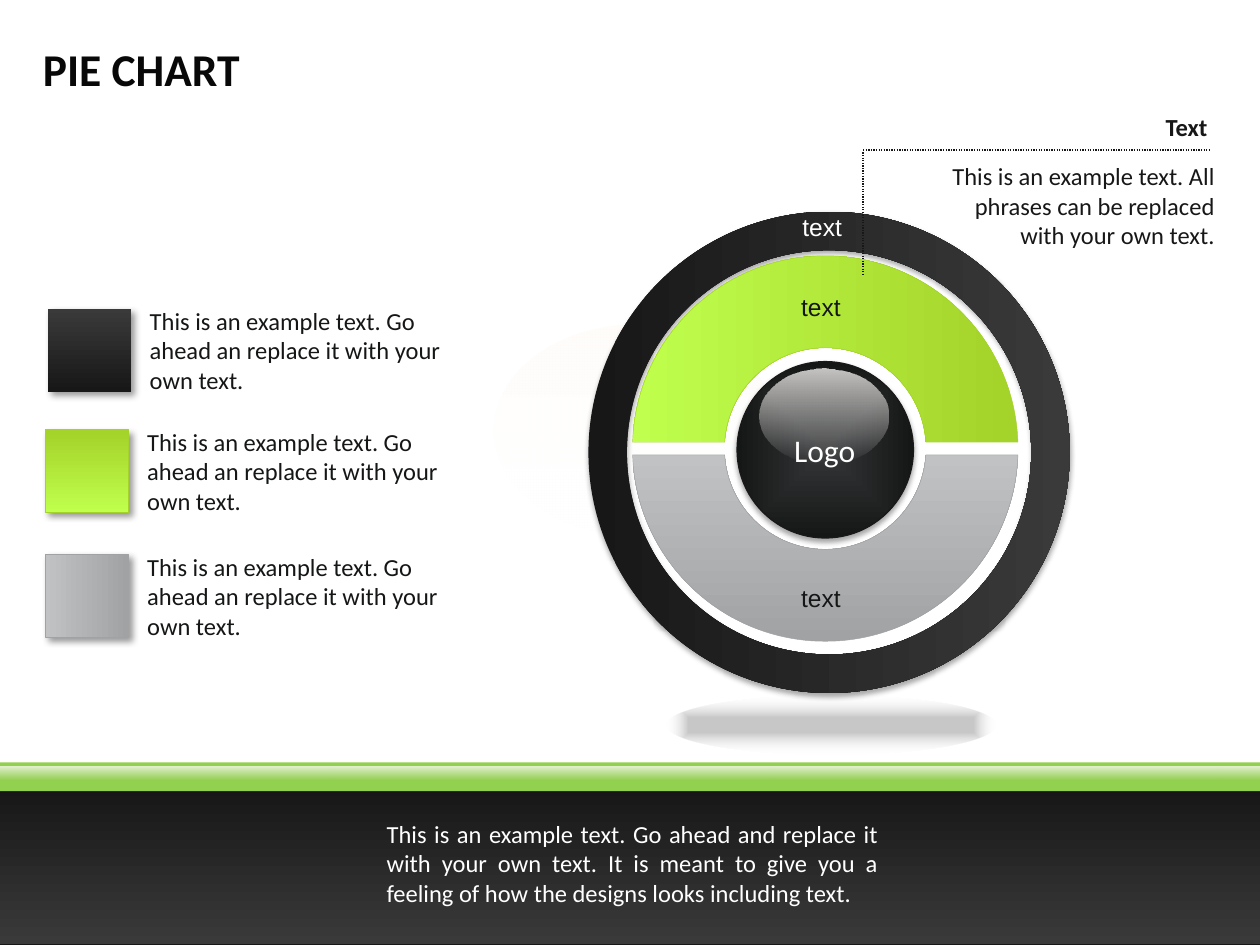
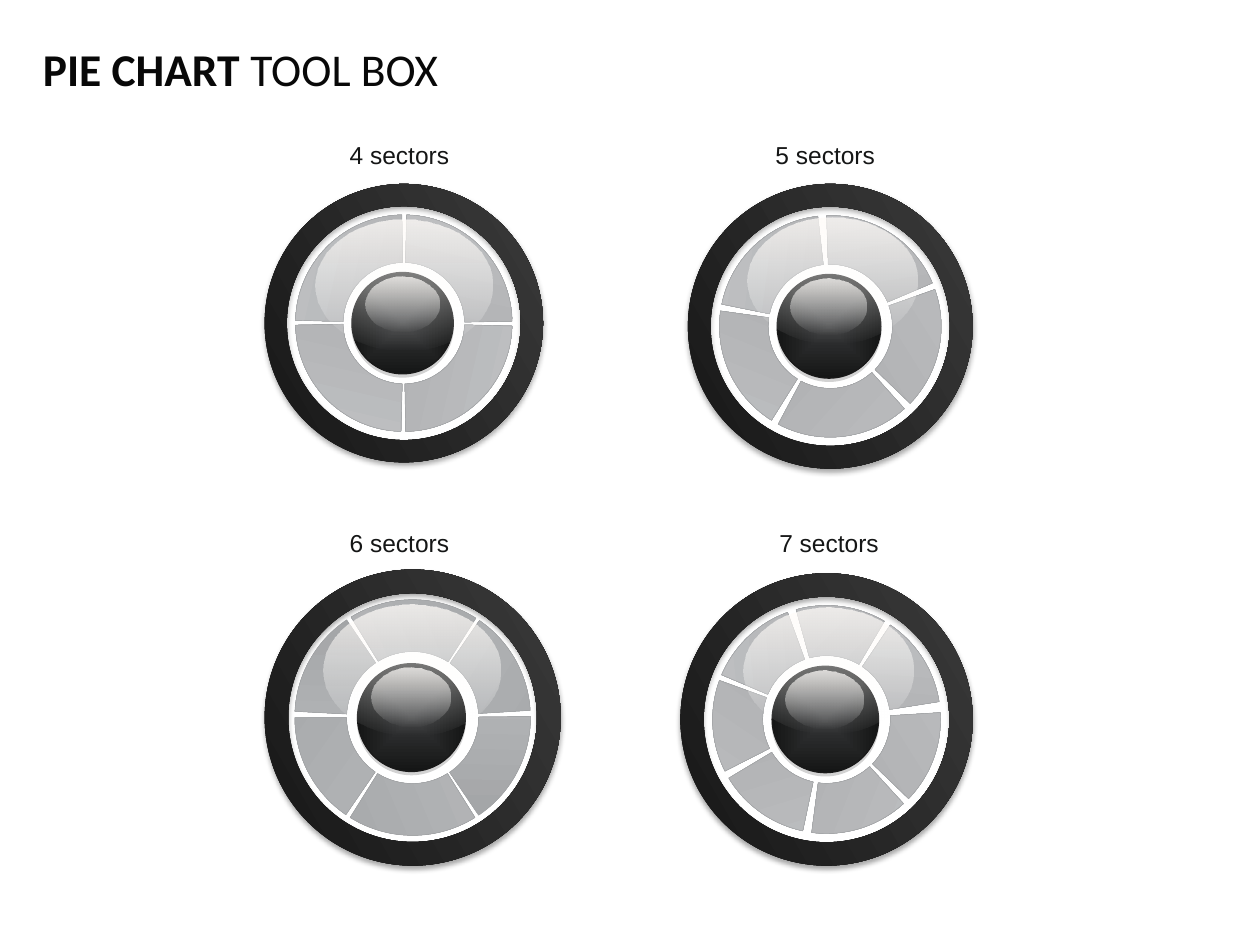
"""Build two pie chart slides: a labelled ring and a tool box of wheels."""
from math import asin, cos, pi, sin, tan

from lxml.etree import SubElement
from pptx import Presentation
from pptx.dml.color import RGBColor
from pptx.enum.dml import MSO_LINE as Dash
from pptx.enum.shapes import MSO_CONNECTOR as Link, MSO_SHAPE as Kind
from pptx.enum.text import MSO_ANCHOR as Anchor, PP_ALIGN as Align
from pptx.oxml.ns import qn
from pptx.util import Inches, Pt

WHITE, INK, BLACK, TITLE = "FFFFFF", "151616", "171717", "080808"
DARK = [(0, BLACK, 100), (100, "3A3A3A", 100)]
GREEN = [(0, "A4D329", 100), (2, "A4D329", 100), (100, "C0FF4D", 100)]
GRAY = [(0, "A0A2A4", 100), (100, "C1C2C4", 100)]
BALL = [(0, "353637", 100), (100, INK, 100)]
GLOSS = [(0, WHITE, 0), (100, "FFFCF9", 77)]
SHEEN = [(0, "F3F3F3", 0), (100, "FFFCF9", 79)]
FLOOR = [(24, "000000", 22), (100, WHITE, 0)]
DROP = ("000000", 35, 3.1, 1.8, 90)
SOFT = ("808080", 35, 0, 1.8, 90)
CAST = ("000000", 40, 4, 3, 45)
GREEN_EDGE, GRAY_EDGE = ("A4D329", 0.25), ("A0A2A4", 0.25)

LEGEND = "This is an example text. Go ahead an replace it with your own text."
CALLOUT = "This is an example text. All phrases can be replaced with your own text."
FOOTER = ("This is an example text. Go ahead and replace it with your own text. "
          "It is meant to give you a feeling of how the designs looks including text.")
SWATCHES = [
    (0.38, 2.45, DARK, 270, None),
    (0.36, 3.41, GREEN, 90, GREEN_EDGE),
    (0.36, 4.4, GRAY, 180, GRAY_EDGE),
]
RING_TAGS = [(6.27, 1.63, WHITE), (6.26, 2.27, INK), (6.26, 4.58, INK)]
LEADERS = [(6.85, 1.19, 9.6, 1.19), (6.85, 1.21, 6.85, 2.18)]

WHEELS = [
    dict(label="4 sectors", tag=(2.63, 1.06), at=(2.1, 1.46), size=2.21,
         disc=1.72, gloss=(2.5, 1.74, 1.41), turn=166,
         arcs=[(90 * i + 1.5, 90 * i + 89) for i in range(4)]),
    dict(label="5 sectors", tag=(6.01, 1.06), at=(5.46, 1.46), size=2.26,
         disc=1.76, gloss=(5.93, 1.73, 1.35), turn=166,
         arcs=[(48, 118), (122, 188), (191.5, 263.5), (268, 337), (340.5, 44)]),
    dict(label="6 sectors", tag=(2.63, 4.14), at=(2.1, 4.52), size=2.35,
         disc=1.87, gloss=(2.57, 4.8, 1.4), turn=235,
         arcs=[(183, 236), (238.5, 302.5), (304.5, 356.5), (359.5, 56),
               (58, 122), (124.5, 180)]),
    dict(label="7 sectors", tag=(6.04, 4.14), at=(5.4, 4.55), size=2.32,
         disc=1.81, gloss=(5.9, 4.82, 1.35), turn=166,
         arcs=[(153, 200), (203, 250), (254.5, 300.5), (304, 351),
               (356.5, 44), (47.5, 97.5), (102, 149)]),
]


def rgb(code):
    return RGBColor.from_string(code)


def tint(parent, code, alpha):
    clr = SubElement(parent, qn("a:srgbClr"), val=code)
    if alpha < 100:
        SubElement(clr, qn("a:alpha"), val=str(alpha * 1000))


def blend(shape, stops, angle):
    shape.fill.gradient()
    grad = shape.element.spPr.find(qn("a:gradFill"))
    for child in list(grad):
        grad.remove(child)
    group = SubElement(grad, qn("a:gsLst"))
    for pos, code, alpha in stops:
        tint(SubElement(group, qn("a:gs"), pos=str(pos * 1000)), code, alpha)
    if angle is None:
        way = SubElement(grad, qn("a:path"), path="shape")
        SubElement(way, qn("a:fillToRect"), dict.fromkeys("ltrb", "50000"))
    else:
        SubElement(grad, qn("a:lin"), ang=str(angle * 60000), scaled="0")


def style(shape, fill, angle=None, line=None, shade=None):
    if isinstance(fill, str):
        shape.fill.solid()
        shape.fill.fore_color.rgb = rgb(fill)
    else:
        blend(shape, fill, angle)
    if line:
        shape.line.color.rgb, shape.line.width = rgb(line[0]), Pt(line[1])
    else:
        shape.line.fill.background()
    shape.shadow.inherit = False
    if shade:
        code, alpha, blur, dist, turn = shade
        effects = shape.element.spPr.find(qn("a:effectLst"))
        outer = SubElement(effects, qn("a:outerShdw"), blurRad=str(Pt(blur)),
                           dist=str(Pt(dist)), dir=str(turn * 60000),
                           algn="ctr", rotWithShape="0")
        tint(outer, code, alpha)
    return shape


def draw(slide, kind, x, y, w, h, *look):
    shape = slide.shapes.add_shape(kind, *map(Inches, (x, y, w, h)))
    return style(shape, *look)


def write(slide, text, x, y, w, h, color=INK, face="Calibri", size=14,
          align=Align.LEFT, bold=False, anchor=Anchor.TOP):
    frame = slide.shapes.add_textbox(*map(Inches, (x, y, w, h))).text_frame
    frame.word_wrap, frame.vertical_anchor = True, anchor
    para = frame.paragraphs[0]
    para.text, para.alignment = text, align
    font = para.font
    font.name, font.size, font.bold = face, Pt(size), bold
    font.color.rgb = rgb(color)
    return frame


def title(slide, strong, light=""):
    frame = write(slide, strong, 0.34, 0.21, 9.32, 0.66, TITLE, size=26,
                  bold=True, anchor=Anchor.MIDDLE)
    frame.margin_left = frame.margin_right = 0
    if light:
        run = frame.paragraphs[0].add_run()
        run.text, run.font.bold = light, False


def shine(slide, x, y, w):
    draw(slide, Kind.OVAL, x, y, w, 0.74 * w, GLOSS, 270)


def ring(slide, x, y, size, angle):
    donut = draw(slide, Kind.DONUT, x, y, size, size, DARK, angle, None, DROP)
    donut.adjustments[0] = 0.08


def ball(slide, x, y, size, shade):
    draw(slide, Kind.OVAL, x, y, size, size, BALL, None, ("191919", 0.75), shade)
    shine(slide, x + 0.13 * size, y + 0.04 * size, 0.73 * size)


def half(slide, side, fill, angle, line):
    cx, cy, gap = 6.55, 3.56, 0.05

    def spot(radius, turn, pull=0):
        x = radius * (cos(turn) - pull * sin(turn))
        y = radius * (sin(turn) + pull * cos(turn))
        return Inches(cx + x), Inches(cy + side * y)

    def curve(radius):
        low = asin(gap / radius)
        pull = 4 / 3 * tan((pi / 2 - low) / 4)
        dots = [spot(radius, low)]
        for a, b in ((low, pi / 2), (pi / 2, pi - low)):
            dots += [spot(radius, a, pull), spot(radius, b, -pull), spot(radius, b)]
        return dots

    points = curve(1.53) + curve(0.8)[::-1]
    pen = slide.shapes.build_freeform(*points[0])
    pen.add_line_segments(points[1:], close=True)
    shape = style(pen.convert_to_shape(), fill, angle, line)
    lines = list(shape.element.spPr.iter(qn("a:lnTo")))
    for first in (0, 3, 7, 10):
        trio = lines[first:first + 3]
        outline = trio[0].getparent()
        bend = SubElement(outline, qn("a:cubicBezTo"))
        trio[0].addprevious(bend)
        for step in trio:
            bend.append(step[0])
            outline.remove(step)


def wheel(slide, label, tag, at, size, disc, gloss, turn, arcs):
    x, y = at
    core, inset = 0.364 * size, (size - disc) / 2
    edge = (size - core) / 2
    ring(slide, x, y, size, 330)
    ball(slide, x + edge - 0.01, y + edge, core, SOFT)
    for start, end in arcs:
        arc = draw(slide, Kind.BLOCK_ARC, x + inset, y + inset, disc, disc,
                   GRAY, 90, GRAY_EDGE)
        arc.rotation = (end - turn) % 360
        arc.adjustments[0] = (start - arc.rotation) % 360 * 0.6
        arc.adjustments[1] = turn * 0.6
        arc.adjustments[2] = 0.22
    shine(slide, *gloss)
    write(slide, label, *tag, 1.08, 0.34, face="Arial", align=Align.CENTER)


def footer(slide):
    draw(slide, Kind.RECTANGLE, -0.01, 6.25, 10.1, 1.25, DARK, 90, (BLACK, 0.75))
    draw(slide, Kind.RECTANGLE, -0.04, 6.05, 10.17, 0.23, "92D050")
    draw(slide, Kind.RECTANGLE, -0.04, 6.08, 10.17, 0.11, SHEEN, 270)
    write(slide, FOOTER, 2.97, 6.48, 4.1, 0.77, WHITE, align=Align.JUSTIFY,
          anchor=Anchor.BOTTOM)


def chart(slide):
    shine(slide, 3.92, 2.58, 2.26)
    ring(slide, 4.67, 1.68, 3.82, 0)
    half(slide, 1, GRAY, 270, GRAY_EDGE)
    half(slide, -1, GREEN, 180, GREEN_EDGE)
    ball(slide, 5.85, 2.87, 1.4, DROP)
    write(slide, "Logo", 5.83, 3.37, 1.43, 0.4, WHITE, size=18, align=Align.CENTER)
    for x, y, color in RING_TAGS:
        write(slide, "text", x, y, 0.97, 0.34, color, "Arial")
    for x, y, fill, angle, line in SWATCHES:
        draw(slide, Kind.RECTANGLE, x, y, 0.66, 0.66, fill, angle, line, CAST)
        write(slide, LEGEND, x + 0.71, y - 0.07, 2.56, 0.81)
    footer(slide)
    draw(slide, Kind.OVAL, 5.29, 5.52, 2.61, 0.47, FLOOR)
    write(slide, "Text", 9, 0.84, 0.68, 0.34, BLACK, align=Align.RIGHT, bold=True)
    write(slide, CALLOUT, 7.43, 1.23, 2.31, 0.81, BLACK, align=Align.RIGHT)
    for ends in LEADERS:
        link = slide.shapes.add_connector(Link.STRAIGHT, *map(Inches, ends))
        link.line.color.rgb, link.line.width = rgb(BLACK), Pt(0.75)
        link.line.dash_style = Dash.ROUND_DOT
        SubElement(link.element.spPr, qn("a:effectLst"))
    title(slide, "PIE CHART")


def tools(slide):
    for spec in WHEELS:
        wheel(slide, **spec)
    title(slide, "PIE CHART ", "TOOL BOX")


def main():
    deck = Presentation()
    deck.slide_width, deck.slide_height = Inches(10), Inches(7.5)
    for build in (chart, tools):
        build(deck.slides.add_slide(deck.slide_layouts[6]))
    deck.save("out.pptx")


if __name__ == "__main__":
    main()
